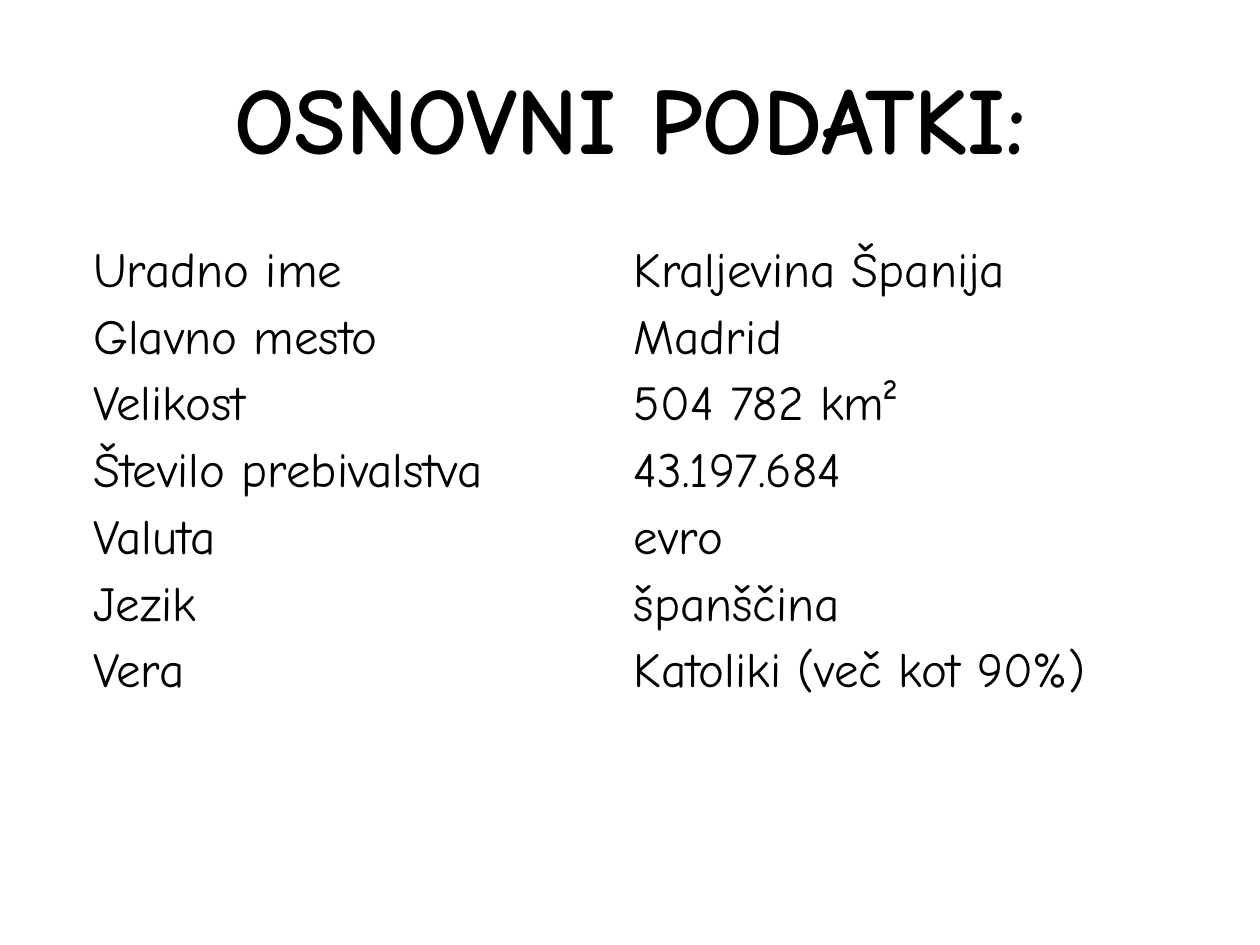
"""Build a slide with a title and a table of basic facts about Spain."""
from pptx import Presentation
from pptx.dml.color import RGBColor
from pptx.enum.text import MSO_ANCHOR, PP_ALIGN
from pptx.util import Inches, Pt

MIDDLE, TOP = MSO_ANCHOR.MIDDLE, MSO_ANCHOR.TOP
CENTER, LEFT = PP_ALIGN.CENTER, PP_ALIGN.LEFT
FONT = "Comic Neue"
INK = "000000"
COL, ROW = 4.29, 0.53
FACTS = [
    ("Uradno ime", "Kraljevina Španija"),
    ("Glavno mesto", "Madrid"),
    ("Velikost", "504 782 km²"),
    ("Število prebivalstva", "43.197.684"),
    ("Valuta", "evro"),
    ("Jezik", "španščina"),
    ("Vera", "Katoliki (več kot 90%)"),
]


def color(code):
    return RGBColor.from_string(code)


def write(frame, text, size, align, bold=False):
    para = frame.paragraphs[0]
    para.alignment = align
    run = para.add_run()
    run.text = text
    run.font.name = FONT
    run.font.size = Pt(size)
    run.font.bold = bold
    run.font.color.rgb = color(INK)


deck = Presentation()
deck.slide_width, deck.slide_height = Inches(10), Inches(7.5)
slide = deck.slides.add_slide(deck.slide_layouts[6])
wide, high = deck.slide_width, deck.slide_height

count = len(FACTS)
grid = slide.shapes.add_table(
    count, 2, Inches(0.67), Inches(1.93),
    Inches(2 * COL), Inches((count + 1) * ROW))
table = grid.table
table.first_row = False
table.horz_banding = False
for col in table.columns:
    col.width = Inches(COL)
for row, fact in zip(table.rows, FACTS):
    row.height = Inches(ROW)
    for cell, text in zip(row.cells, fact):
        cell.fill.background()
        cell.vertical_anchor = TOP
        cell.margin_left = cell.margin_right = Inches(0.07)
        cell.margin_top = cell.margin_bottom = 0
        write(cell.text_frame, text, 28, LEFT)
table.rows[count - 1].height = Inches(2 * ROW)

title = slide.shapes.add_textbox(
    int(wide * 0.05), int(high * 0.04), int(wide * 0.9), Inches(1.25))
frame = title.text_frame
frame.word_wrap = True
frame.vertical_anchor = MIDDLE
write(frame, "OSNOVNI PODATKI:", 54, CENTER, True)

table_style = grid.element.find(".//{*}tableStyleId")
table_style.text = "{2D5ABB26-0587-4C30-8999-92F81FD0307C}"

deck.save("out.pptx")
